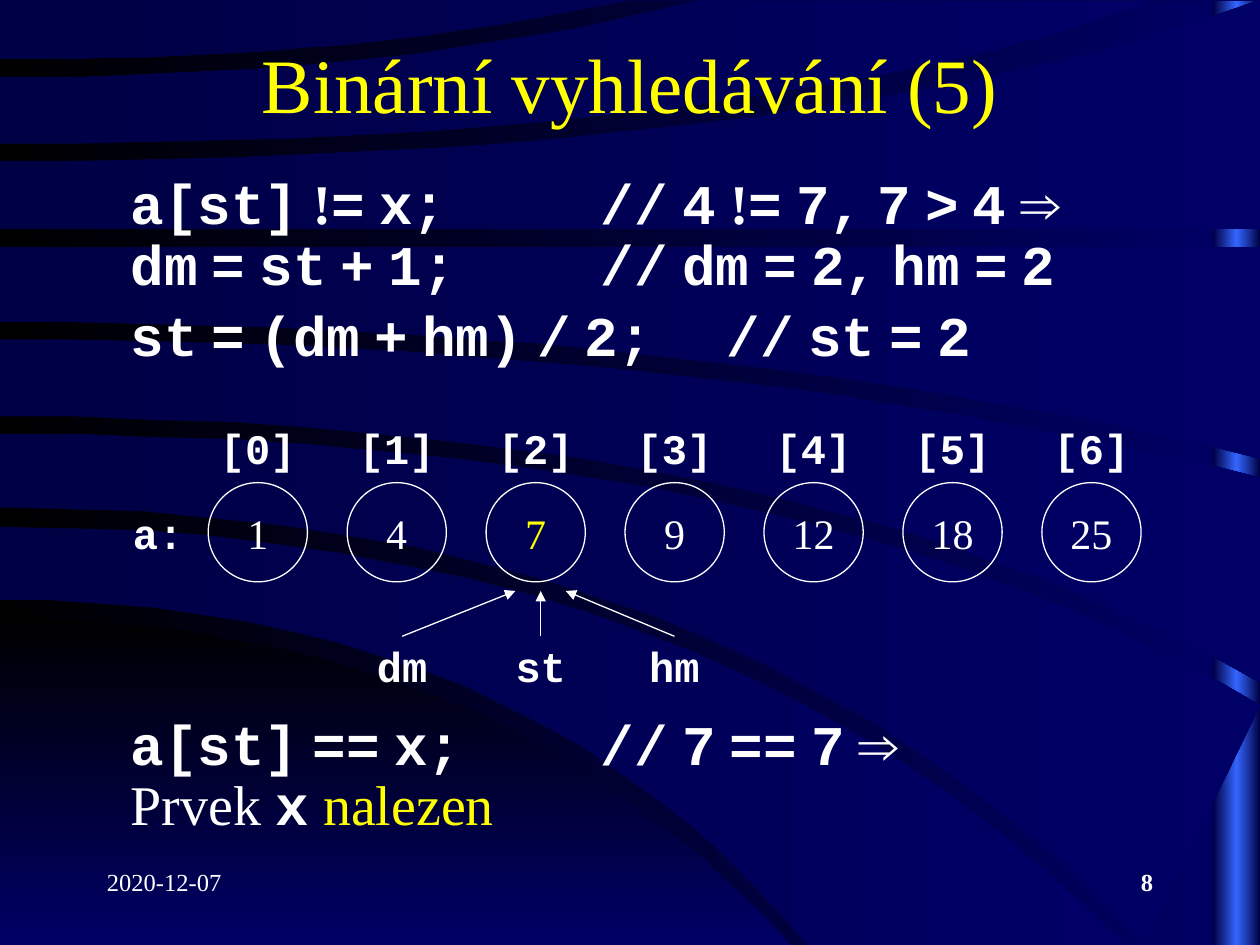
from copy import deepcopy
from itertools import groupby

from lxml import etree
from pptx import Presentation
from pptx import util as u
from pptx.dml.color import RGBColor
from pptx.enum import shapes, text
from pptx.oxml.ns import qn

WHITE = RGBColor(0xFF, 0xFF, 0xFF)
YELLOW = RGBColor(0xFF, 0xFF, 0x00)
BLACK = RGBColor(0x00, 0x00, 0x00)
DEEP = RGBColor(0x00, 0x00, 0x44)
NAVY = RGBColor(0x00, 0x00, 0x66)
BLUE = RGBColor(0x33, 0x66, 0xFF)

SERIF = "Times New Roman"
MONO = "Courier New"
PLAIN = {"name": SERIF, "bold": False}
CODE = {"name": MONO, "bold": True}
MIDDLE = text.MSO_ANCHOR.MIDDLE
TOP = text.MSO_ANCHOR.TOP
CENTER = text.PP_ALIGN.CENTER
LEFT = text.PP_ALIGN.LEFT
RIGHT = text.PP_ALIGN.RIGHT

WIDTH, HEIGHT = 720, 540
CURVE_STEPS = 20


def straight(level):
    return level, WIDTH / 2, WIDTH, level


CORNER = (354, 283, 452, HEIGHT), straight(HEIGHT)
BANDS = [
    ((301, 410, 643, HEIGHT), (343, 300, 462, HEIGHT)),
    ((248, 462, WIDTH, 403), (290, 422, 654, HEIGHT)),
    ((194, 400, WIDTH, 273), (238, 456, WIDTH, 390)),
    (straight(141), (184, 402, WIDTH, 262)),
    ((92, 470, WIDTH, 0), straight(131)),
    ((44, 234, 400, 0), (82, 438, 660, 0)),
    (straight(0), (34, 205, 361, 0)),
]


def points(*values):
    return [u.Pt(value) for value in values]


def set_gradient(fill, start, end, angle=0):
    fill.gradient()
    fill.gradient_angle = angle
    for stop, colour, position in zip(fill.gradient_stops, (start, end), (0, 1)):
        stop.color.rgb = colour
        stop.position = position


def add_side_bar(page):
    bar = page.shapes.add_shape(
        shapes.MSO_SHAPE.RECTANGLE, *points(693.4, 0, 26.6, HEIGHT))
    bar.shadow.inherit = False
    bar.line.fill.background()
    set_gradient(bar.fill, DEEP, BLUE)
    stops = bar.element.spPr.find(".//" + qn("a:gsLst"))
    stops.append(deepcopy(stops[0]))
    for stop, position in zip(bar.fill.gradient_stops, (0, 0.5, 1)):
        stop.position = position


def curve(start, bend, right, end):
    for step in range(CURVE_STEPS + 1):
        part = step / CURVE_STEPS
        x = 2 * part * (1 - part) * bend + part ** 2 * right
        yield round(x, 2), round(start + part ** 2 * (end - start), 2)


def add_band(page, edges, start, end, angle=0):
    upper, lower = (list(curve(*edge)) for edge in edges)
    if edges is CORNER:
        lower = [(0, HEIGHT), upper[-1]]
    builder = page.shapes.build_freeform(*upper[0], scale=u.Pt(1))
    builder.add_line_segments(upper[1:] + lower[::-1], close=True)
    band = builder.convert_to_shape()
    band.shadow.inherit = False
    band.line.fill.background()
    set_gradient(band.fill, start, end, angle)


def add_span(para, words, size, style, colour=WHITE):
    span = para.add_run()
    span.text = words
    for name, value in {"size": u.Pt(size), **style}.items():
        setattr(span.font, name, value)
    span.font.color.rgb = colour


def add_code(para, words):
    for is_serif, letters in groupby(words, lambda letter: letter in " !⇒"):
        name = SERIF if is_serif else MONO
        add_span(para, "".join(letters), 32, {"name": name, "bold": True})


def add_label(page, place, words, size, style, colour=WHITE, align=CENTER, anchor=MIDDLE):
    box = page.shapes.add_textbox(*points(*place))
    for name, value in {"word_wrap": True, "vertical_anchor": anchor}.items():
        setattr(box.text_frame, name, value)
    para = box.text_frame.paragraphs[0]
    para.alignment = align
    add_span(para, words, size, style, colour)


def add_listing_box(page, top, height):
    box = page.shapes.add_textbox(*points(48.2, top, 630, height))
    for name, value in {"word_wrap": True, "margin_left": u.Pt(26.4)}.items():
        setattr(box.text_frame, name, value)
    return box.text_frame


def format_listing(para):
    for name, value in {"line_spacing": 0.9, "space_before": u.Pt(6.4)}.items():
        setattr(para, name, value)
    tabs = etree.SubElement(para._p.get_or_add_pPr(), qn("a:tabLst"))
    for position in (268.8, 340.8):
        etree.SubElement(tabs, qn("a:tab"), pos=str(u.Pt(position)), algn="l")


def add_circle(page, left, words, colour):
    circle = page.shapes.add_shape(
        shapes.MSO_SHAPE.OVAL, *points(left, 275.8, 56.7, 56.7))
    circle.shadow.inherit = False
    circle.fill.background()
    circle.line.color.rgb = WHITE
    circle.line.width = u.Pt(0.75)
    layout = {"vertical_anchor": MIDDLE, "margin_left": 0, "margin_right": 0}
    for name, value in layout.items():
        setattr(circle.text_frame, name, value)
    para = circle.text_frame.paragraphs[0]
    para.alignment = CENTER
    add_span(para, words, 24, PLAIN, colour)


def add_arrow(page, start, end):
    arrow = page.shapes.add_connector(
        shapes.MSO_CONNECTOR.STRAIGHT, *points(start, 363.6, end, 337.7))
    arrow.line.color.rgb = WHITE
    arrow.line.width = u.Pt(0.75)
    properties = arrow._element.spPr
    etree.SubElement(properties.find(qn("a:ln")), qn("a:tailEnd"), type="triangle")
    etree.SubElement(properties, qn("a:effectLst"))


def main():
    deck = Presentation()
    deck.slide_width, deck.slide_height = points(WIDTH, HEIGHT)
    page = deck.slides.add_slide(deck.slide_layouts[6])
    set_gradient(page.background.fill, BLACK, NAVY)
    add_side_bar(page)
    add_band(page, CORNER, BLACK, NAVY, 270)
    for edges in BANDS:
        add_band(page, edges, DEEP, NAVY)

    add_label(page, (54, 491.8, 150, 36), "2020-12-07", 14, PLAIN, align=LEFT, anchor=TOP)
    add_label(page, (516, 491.8, 150, 36), "8", 14, {"name": SERIF, "bold": True},
              align=RIGHT, anchor=TOP)
    add_label(page, (54, 14.4, 612, 66.2), "Binární vyhledávání (5)", 44, PLAIN, YELLOW)

    steps = add_listing_box(page, 97.2, 118.8)
    first = steps.paragraphs[0]
    add_code(first, "a[st] != x;\t// 4 != 7, 7 > 4 ⇒")
    first.add_line_break()
    add_code(first, "dm = st + 1;\t// dm = 2, hm = 2")
    second = steps.add_paragraph()
    add_code(second, "st = (dm + hm) / 2;\t// st = 2")

    for index, value in enumerate((1, 4, 7, 9, 12, 18, 25)):
        left = 119 + 79.4 * index
        add_circle(page, left, str(value), YELLOW if value == 7 else WHITE)
        add_label(page, (left - 3, 227.5, 62.6, 56.7), f"[{index}]", 24, CODE)
    add_label(page, (64.8, 275.8, 51, 56.7), "a:", 24, CODE)

    for name, middle, tip in (("dm", 229.8, 294.5), ("st", 309, 309), ("hm", 385.4, 323.3)):
        add_label(page, (middle - 31.3, 352.1, 62.6, 56.7), name, 24, CODE)
        add_arrow(page, middle, tip)

    result = add_listing_box(page, 406.1, 76.3).paragraphs[0]
    add_code(result, "a[st] == x;\t// 7 == 7 ⇒")
    result.add_line_break()
    add_span(result, "Prvek ", 32, PLAIN)
    add_code(result, "x ")
    add_span(result, "nalezen", 32, PLAIN, YELLOW)
    for para in (first, second, result):
        format_listing(para)

    deck.save("out.pptx")


if __name__ == "__main__":
    main()
